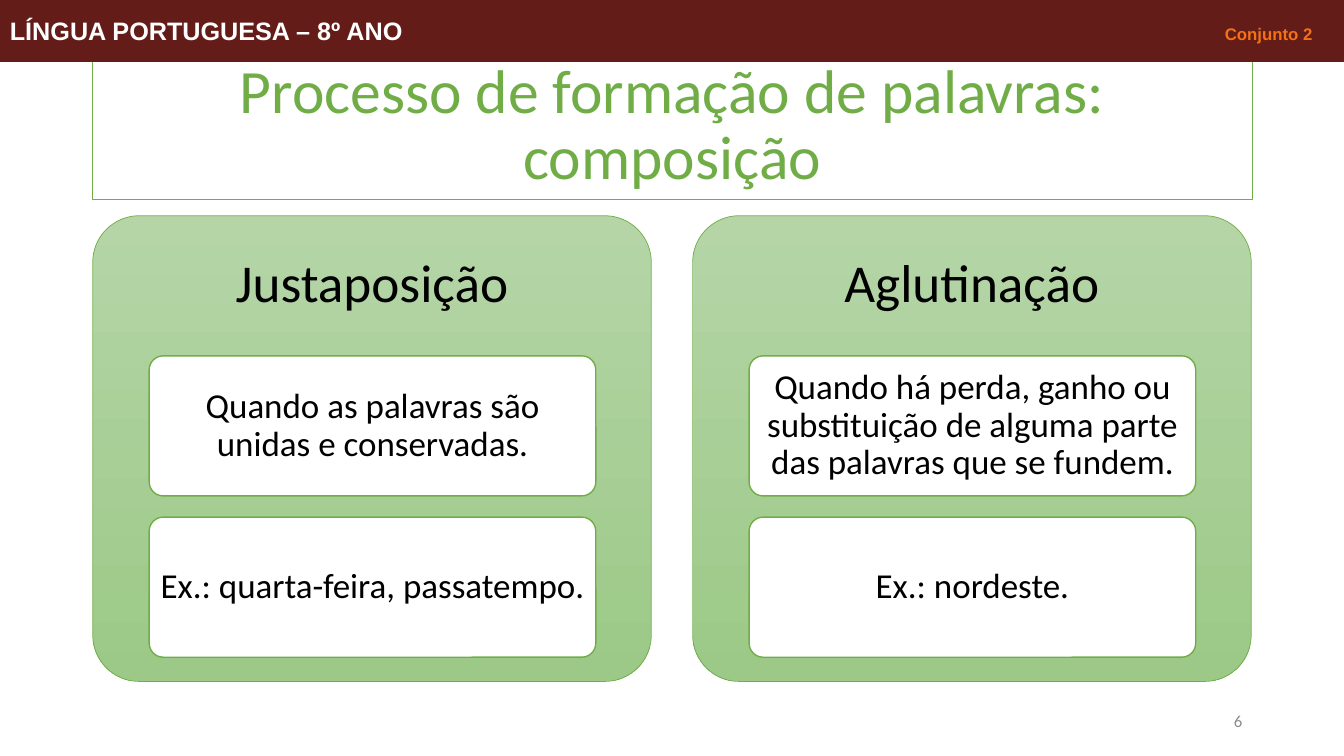
from lxml.etree import SubElement
from pptx import Presentation
from pptx.dml.color import RGBColor
from pptx.enum.shapes import MSO_SHAPE
from pptx.enum.text import MSO_ANCHOR, MSO_AUTO_SIZE, PP_ALIGN
from pptx.oxml.ns import qn
from pptx.util import Inches, Pt

GREEN = RGBColor(0x70, 0xAD, 0x47)
PANEL_TOP = RGBColor(0xB5, 0xD5, 0xA7)
PANEL_BOTTOM = RGBColor(0x9C, 0xC9, 0x87)
MAROON = RGBColor(0x63, 0x1C, 0x18)
ORANGE = RGBColor(0xF4, 0x71, 0x16)
GREY = RGBColor(0x8C, 0x8C, 0x8C)
WHITE = RGBColor(0xFF, 0xFF, 0xFF)
BLACK = RGBColor(0, 0, 0)

PANEL_LEFT, PANEL_PITCH = 0.92, 5.95
CARD_TOP, CARD_PITCH, CARD_INDENT = 3.53, 1.6, 0.56
PROCESSES = [
    ("Justaposição", [
        "Quando as palavras são unidas e conservadas.",
        "Ex.: quarta-feira, passatempo.",
    ]),
    ("Aglutinação", [
        "Quando há perda, ganho ou substituição de alguma parte das palavras que se fundem.",
        "Ex.: nordeste.",
    ]),
]


def add_run(paragraph, text, size, color, font_name="Calibri", bold=False):
    run = paragraph.add_run()
    run.text = text
    font_format = {"name": font_name, "size": Pt(size), "bold": bold}
    for attribute, value in font_format.items():
        setattr(run.font, attribute, value)
    run.font.color.rgb = color


def format_frame(shape, alignment, side=0.1, edge=0.05, line_spacing=None):
    frame = shape.text_frame
    frame_format = {
        "word_wrap": True,
        "auto_size": MSO_AUTO_SIZE.NONE,
        "vertical_anchor": MSO_ANCHOR.MIDDLE,
        "margin_left": Inches(side),
        "margin_right": Inches(side),
        "margin_top": Inches(edge),
        "margin_bottom": Inches(edge),
    }
    for attribute, value in frame_format.items():
        setattr(frame, attribute, value)
    paragraph = frame.paragraphs[0]
    paragraph.alignment = alignment
    paragraph.line_spacing = line_spacing
    return paragraph


def outline(shape, color, width):
    shape.line.color.rgb = color
    shape.line.width = Pt(width)


def paint(shape, fill, line, width):
    shape.fill.solid()
    shape.fill.fore_color.rgb = fill
    outline(shape, line, width)


def add_block(slide, kind, left, top, width, height):
    shape = slide.shapes.add_shape(
        kind, Inches(left), Inches(top), Inches(width), Inches(height))
    shape.shadow.inherit = False
    if kind == MSO_SHAPE.ROUNDED_RECTANGLE:
        shape.adjustments[0] = 0.1
    return shape


def add_label(slide, text, left, top, width, height, size, color, alignment, **spacing):
    box = slide.shapes.add_textbox(
        Inches(left), Inches(top), Inches(width), Inches(height))
    add_run(format_frame(box, alignment, **spacing), text, size, color)


def add_card(slide, text, left, top):
    card = add_block(slide, MSO_SHAPE.ROUNDED_RECTANGLE, left, top, 4.43, 1.39)
    paint(card, WHITE, GREEN, 1)
    paragraph = format_frame(card, PP_ALIGN.CENTER, side=0.07, line_spacing=0.9)
    add_run(paragraph, text, 25, BLACK)


def add_panel(slide, heading, cards, left):
    panel = add_block(slide, MSO_SHAPE.ROUNDED_RECTANGLE, left, 2.14, 5.54, 4.62)
    panel.fill.gradient()
    panel.fill.gradient_angle = 270
    for stop, color in zip(panel.fill.gradient_stops, (PANEL_TOP, PANEL_BOTTOM)):
        stop.color.rgb = color
    outline(panel, GREEN, 0.5)
    add_label(slide, heading, left, 2.14, 5.54, 1.38, 38, BLACK, PP_ALIGN.CENTER,
              side=0.16, edge=0.16, line_spacing=0.9)
    for row, text in enumerate(cards):
        add_card(slide, text, left + CARD_INDENT, CARD_TOP + row * CARD_PITCH)


def add_title(slide, text):
    title = slide.shapes.title
    title.left, title.top = Inches(0.92), Inches(0.53)
    title.width, title.height = Inches(11.5), Inches(1.45)
    paint(title, WHITE, GREEN, 1)
    add_run(format_frame(title, PP_ALIGN.CENTER, line_spacing=0.9), text, 44, GREEN)


def add_banner(slide, subject, collection):
    banner = add_block(slide, MSO_SHAPE.RECTANGLE, 0, 0, 13.33, 0.61)
    paint(banner, MAROON, MAROON, 0.75)
    paragraph = format_frame(banner, PP_ALIGN.LEFT)
    tab_list = SubElement(paragraph._p.get_or_add_pPr(), qn("a:tabLst"))
    SubElement(tab_list, qn("a:tab"), pos=str(Inches(12.92)), algn="r")
    add_run(paragraph, subject + "\t", 18, WHITE, "Arial", True)
    add_run(paragraph, collection, 12, ORANGE, "Arial", True)


def main():
    presentation = Presentation()
    presentation.slide_width = Inches(13.33)
    presentation.slide_height = Inches(7.5)
    slide = presentation.slides.add_slide(presentation.slide_layouts[5])
    add_title(slide, "Processo de formação de palavras: composição")
    for column, (heading, cards) in enumerate(PROCESSES):
        add_panel(slide, heading, cards, PANEL_LEFT + column * PANEL_PITCH)
    add_label(slide, "6", 9.42, 6.95, 3, 0.4, 12, GREY, PP_ALIGN.RIGHT)
    add_banner(slide, "LÍNGUA PORTUGUESA – 8º ANO", "Conjunto 2")
    presentation.save("out.pptx")


if __name__ == "__main__":
    main()
